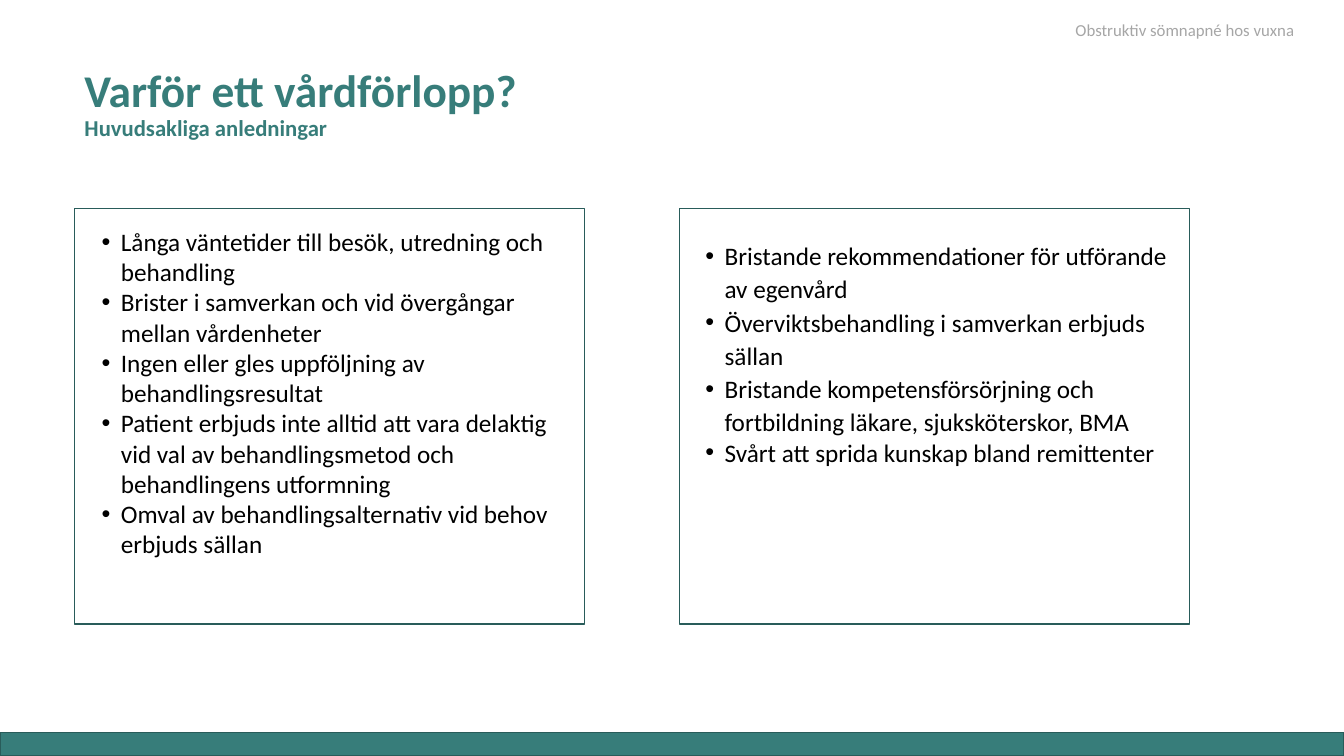
"""Build the slide on why a care pathway for sleep apnoea is needed."""
import pptx
import pptx.util
import pptx.dml.color
import pptx.enum.shapes
import pptx.enum.text
import pptx.oxml.ns
import lxml.etree

COLOURS = {"teal": "377D7A", "edge": "295C5A", "ink": "000000", "grey": "A6A6A6"}
FONT = "Calibri"
BULLET_INDENT = pptx.util.Inches(0.19)
RGB = pptx.dml.color.RGBColor.from_string

deck = pptx.Presentation()
deck.slide_width = pptx.util.Inches(13.33)
deck.slide_height = pptx.util.Inches(7.5)
page = deck.slides.add_slide(deck.slide_layouts[6])


def area(left, top, width, height):
    """Turn percentages of the slide into lengths."""
    return [int(share * side / 100) for share, side in (
        (left, deck.slide_width), (top, deck.slide_height),
        (width, deck.slide_width), (height, deck.slide_height))]


def add_span(para, text, size, colour, bold):
    """Add a run of text in the slide's font."""
    span = para.add_run()
    span.text = text
    for name, value in {"name": FONT, "size": pptx.util.Pt(size), "bold": bold}.items():
        setattr(span.font, name, value)
    span.font.color.rgb = RGB(COLOURS[colour])


rectangles = [
    ((0, 96.93, 100, 3.07), "teal"),
    ((5.55, 27.6, 37.95, 54.93), None),
    ((50.55, 27.6, 37.95, 54.93), None),
]
for place, fill in rectangles:
    box = page.shapes.add_shape(pptx.enum.shapes.MSO_SHAPE.RECTANGLE, *area(*place))
    box.shadow.inherit = False
    if fill:
        box.fill.solid()
        box.fill.fore_color.rgb = RGB(COLOURS[fill])
    else:
        box.fill.background()
    box.line.color.rgb = RGB(COLOURS["edge"])
    box.line.width = pptx.util.Pt(1)

title = page.shapes.add_textbox(*area(5.55, 10.45, 75, 8.93)).text_frame
title.word_wrap = True
title.vertical_anchor = pptx.enum.text.MSO_ANCHOR.BOTTOM
heading = title.paragraphs[0]
heading.line_spacing = 0.9
add_span(heading, "Varför ett vårdförlopp?", 32.4, "teal", True)
heading.add_line_break()
add_span(heading, "Huvudsakliga anledningar", 16.2, "teal", True)

topic = page.shapes.add_textbox(*area(79.28, 2, 18, 4)).text_frame
topic.word_wrap = True
add_span(topic.paragraphs[0], "Obstruktiv sömnapné hos vuxna", 12, "grey", False)

care_reasons = [
    ("Långa väntetider till besök, utredning och behandling", 1.0),
    ("Brister i samverkan och vid övergångar mellan vårdenheter", 1.0),
    ("Ingen eller gles uppföljning av behandlingsresultat", 1.0),
    ("Patient erbjuds inte alltid att vara delaktig vid val av behandlingsmetod "
     "och behandlingens utformning", 1.0),
    ("Omval av behandlingsalternativ vid behov erbjuds sällan", 1.0),
]
skill_reasons = [
    ("Bristande rekommendationer för utförande av egenvård", 1.1),
    ("Överviktsbehandling i samverkan erbjuds sällan", 1.1),
    ("Bristande kompetensförsörjning och fortbildning läkare, sjuksköterskor, BMA", 1.1),
    ("Svårt att sprida kunskap bland remittenter", 1.0),
]
reason_lists = [
    ((6.83, 29.28, 36.23, 53.87), care_reasons),
    ((51.75, 30.75, 36.15, 36.27), skill_reasons),
]
for place, reasons in reason_lists:
    frame = page.shapes.add_textbox(*area(*place)).text_frame
    frame.word_wrap = True
    for number, (text, spacing) in enumerate(reasons):
        para = frame.paragraphs[0] if number == 0 else frame.add_paragraph()
        para.line_spacing = spacing
        settings = para._p.get_or_add_pPr()
        settings.set("marL", str(BULLET_INDENT))
        settings.set("indent", str(-BULLET_INDENT))
        for tag, name, value in (("a:buFont", "typeface", "Arial"), ("a:buChar", "char", "•")):
            lxml.etree.SubElement(settings, pptx.oxml.ns.qn(tag)).set(name, value)
        add_span(para, text, 18, "ink", False)

deck.save("out.pptx")
